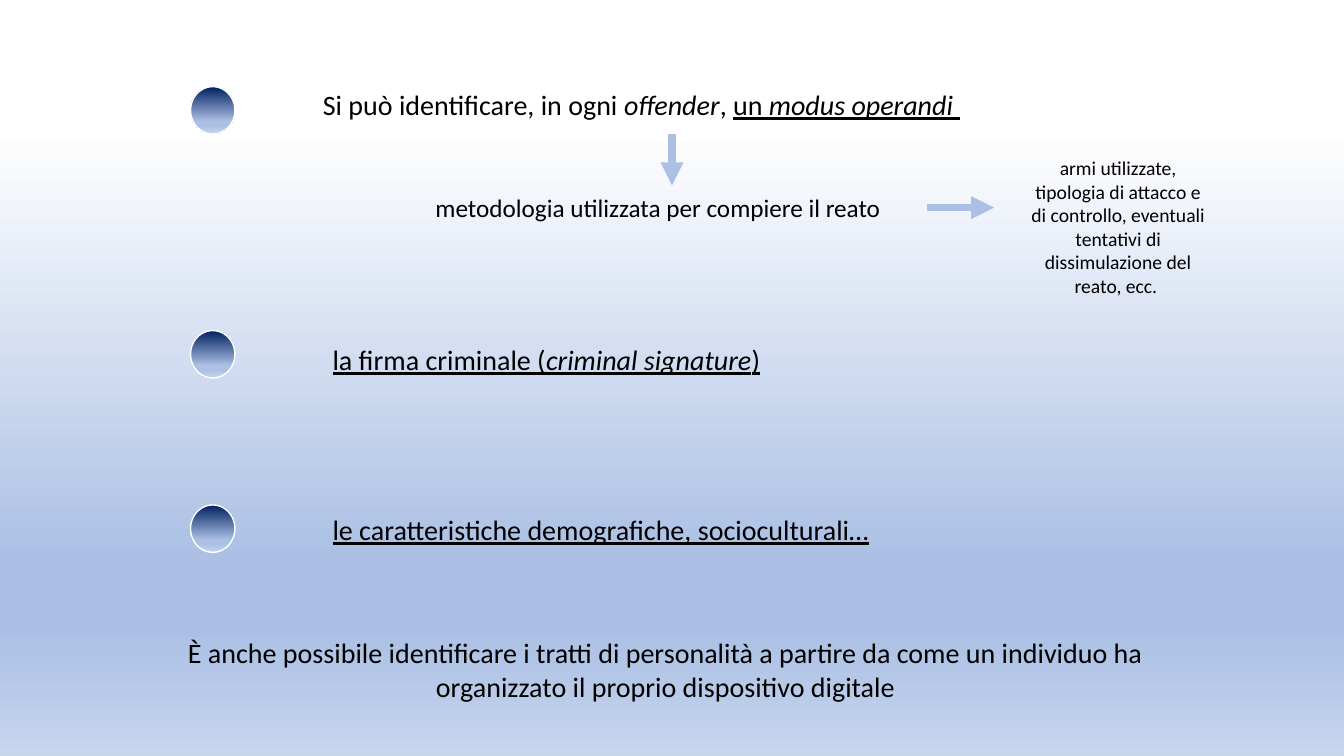
from lxml import etree
from pptx import Presentation, util as u
from pptx.dml.color import RGBColor
from pptx.enum import shapes, text
from pptx.oxml.ns import qn

COLORS = {"ink": "000000", "white": "FFFFFF", "navy": "002060",
          "blue": "ABC0E4", "pale": "C7D5ED"}
FONT = "Calibri"
SLIDE_W, SLIDE_H = 13.33, 7.5
FADE = [(74, "blue"), (83, "blue"), (100, "pale")]
BULLET_X, BULLET_W, BULLET_H = 1.89, 0.44, 0.47
TOPIC_X = 3.2


def rgb(name):
    return RGBColor.from_string(COLORS[name])


def paint_gradient(fill, element, first_stop):
    """Fade downwards from first_stop (percent, colour) to the pale blue."""
    fill.gradient()
    fill.gradient_angle = 270
    stops = next(element.iter(qn("a:gsLst")))
    for stop in list(stops):
        stops.remove(stop)
    for percent, color in [first_stop] + FADE:
        stop = etree.SubElement(stops, qn("a:gs"), pos=str(percent * 1000))
        etree.SubElement(stop, qn("a:srgbClr"), val=COLORS[color])


def add_words(slide, box, runs, size, centred=False):
    """Place one paragraph; each run is (words, style), style holding i and/or u."""
    frame = slide.shapes.add_textbox(*map(u.Inches, box)).text_frame
    frame.word_wrap = True
    paragraph = frame.paragraphs[0]
    paragraph.alignment = text.PP_ALIGN.CENTER if centred else text.PP_ALIGN.LEFT
    for words, style in runs:
        run = paragraph.add_run()
        run.text = words
        run.font.name, run.font.size = FONT, u.Pt(size)
        run.font.color.rgb = rgb("ink")
        run.font.italic = "i" in style
        run.font.underline = "u" in style
    return paragraph


def add_bullet(slide, top):
    bullet = slide.shapes.add_shape(
        shapes.MSO_SHAPE.FLOWCHART_CONNECTOR,
        *map(u.Inches, (BULLET_X, top, BULLET_W, BULLET_H)))
    bullet.shadow.inherit = False
    paint_gradient(bullet.fill, bullet.element, (0, "navy"))
    bullet.line.color.rgb = rgb("white")
    bullet.line.width = u.Pt(1)


def add_arrow(slide, start, end):
    arrow = slide.shapes.add_connector(
        shapes.MSO_CONNECTOR.STRAIGHT, *map(u.Inches, start + end))
    arrow.line.color.rgb = rgb("blue")
    arrow.line.width = u.Pt(5.5)
    etree.SubElement(arrow.line._get_or_add_ln(), qn("a:tailEnd"), type="triangle")
    etree.SubElement(arrow.element.spPr, qn("a:effectLst"))


def add_modus_operandi(slide, top):
    """First topic, with its definition below and the examples on the right."""
    add_bullet(slide, top)
    statement = add_words(slide, (1.06, top, 10.6, 0.96), [
        ("Si può identificare, in ogni", ""), (" offender", "i"), (", ", ""),
        ("un ", "u"), ("modus operandi ", "iu")], 20, centred=True)
    statement.line_spacing = 0.9
    statement.space_before = u.Pt(10)

    definition_top = top + 1
    add_arrow(slide, (SLIDE_W / 2, top + BULLET_H),
              (SLIDE_W / 2, definition_top - 0.02))
    add_words(slide, (4.22, definition_top, 5.65, 0.4),
              [("metodologia utilizzata per compiere il reato", "")], 18)

    arrow_y = definition_top + 0.2
    add_arrow(slide, (9.19, arrow_y), (9.86, arrow_y))
    add_words(slide, (10.08, top + 0.64, 2.02, 1.51), [
        ("armi utilizzate, tipologia di attacco e di controllo, eventuali "
         "tentativi di dissimulazione del reato, ecc. ", "")], 14, centred=True)


def add_topic(slide, bullet_top, text_top, width, runs):
    add_bullet(slide, bullet_top)
    add_words(slide, (TOPIC_X, text_top, width, 0.44), runs, 20)


def add_conclusion(slide, box):
    add_words(slide, box, [
        ("È anche possibile identificare i tratti di personalità a partire da "
         "come un individuo ha organizzato il proprio dispositivo digitale", "")],
        20, centred=True)


def main():
    deck = Presentation()
    deck.slide_width, deck.slide_height = u.Inches(SLIDE_W), u.Inches(SLIDE_H)
    slide = deck.slides.add_slide(deck.slide_layouts[6])
    paint_gradient(slide.background.fill, slide.element, (17, "white"))

    add_modus_operandi(slide, 0.86)
    add_topic(slide, 3.28, 3.35, 5.65, [
        ("la firma criminale (", "u"), ("criminal signature", "iu"), (")", "u")])
    add_topic(slide, 5.01, 5.04, 6.89, [
        ("le caratteristiche demografiche, socioculturali…", "u")])
    add_conclusion(slide, (1.72, 6.26, 9.76, 0.77))
    deck.save("out.pptx")


if __name__ == "__main__":
    main()
